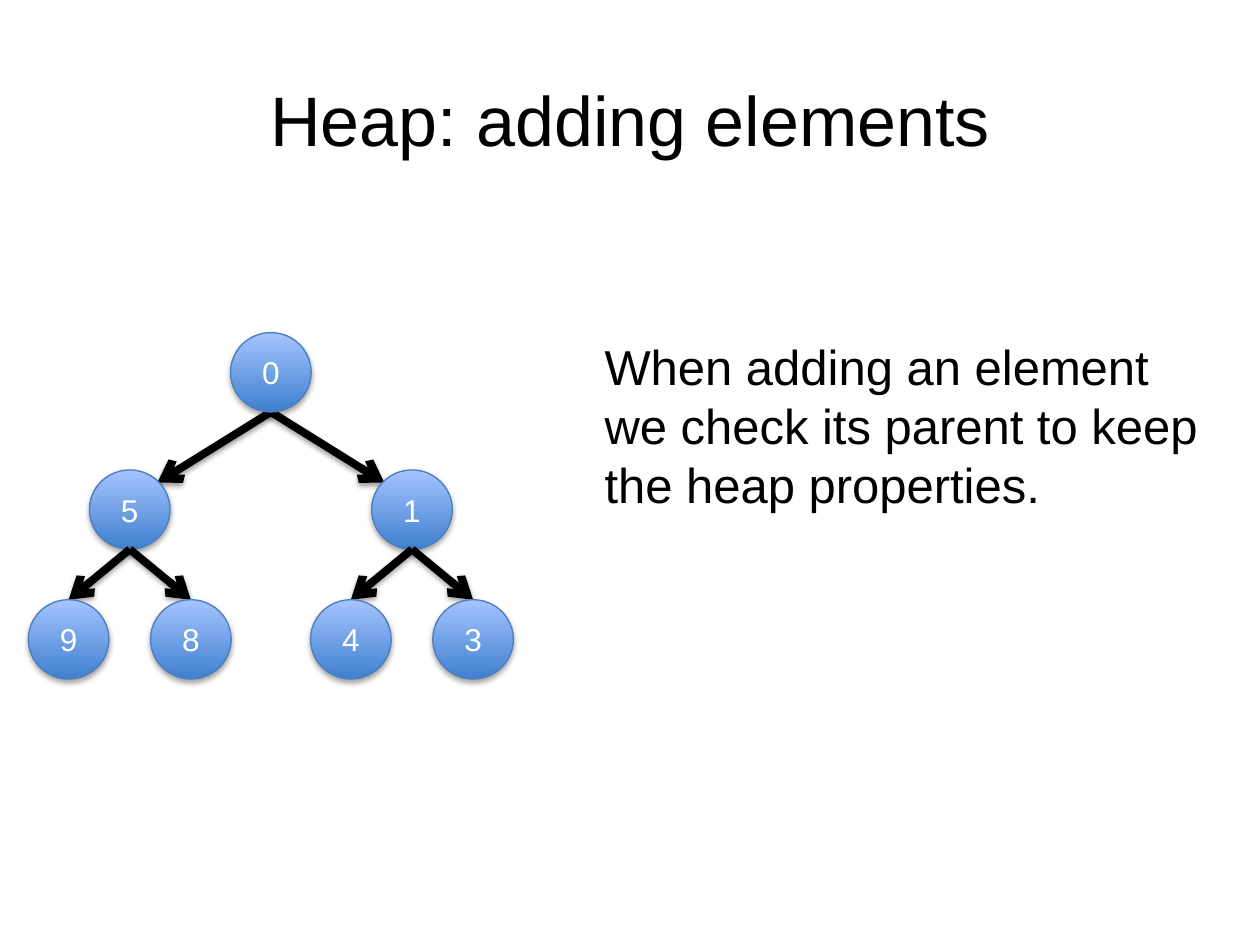
from lxml import etree
from pptx import Presentation, util as u
from pptx.dml.color import RGBColor
from pptx.enum import shapes, text
from pptx.oxml import ns

BLACK = RGBColor(0x00, 0x00, 0x00)
WHITE = RGBColor(0xFF, 0xFF, 0xFF)
DEEP = RGBColor(0x3F, 0x80, 0xCE)
PALE = RGBColor(0xA4, 0xC4, 0xFF)
EDGE = RGBColor(0x4B, 0x7E, 0xBC)

WIDE, HIGH = 10, 7.5
NODE_W, NODE_H = 0.64, 0.63
ROWS = (2.64, 3.73, 4.76)  # top of each tree level
ROOT_X = 2.15              # centre of the tree
STEP, LEAF = 1.12, 0.485   # reach to each side, per level


def write(shape, lines, size=18, color=BLACK, align=text.PP_ALIGN.LEFT,
          anchor=text.MSO_ANCHOR.TOP):
    frame = shape.text_frame
    frame.word_wrap = True
    frame.vertical_anchor = anchor
    frame.text = "\n".join(lines)
    for para in frame.paragraphs:
        para.alignment = align
        font = para.runs[0].font
        font.name, font.size = "Arial", u.Pt(size)
        font.color.rgb = color


def box(slide, x, y, w, h, lines, **form):
    # Place and size are shares of the slide
    shape = slide.shapes.add_textbox(
        u.Inches(x * WIDE), u.Inches(y * HIGH),
        u.Inches(w * WIDE), u.Inches(h * HIGH))
    write(shape, lines, **form)


def shade(shape, drop, alpha):
    # Soft shadow straight below; call once the line is set
    props = shape._element.spPr
    effects = etree.SubElement(props, ns.qn("a:effectLst"))
    outer = etree.SubElement(
        effects, ns.qn("a:outerShdw"), blurRad=str(u.Pt(3.15)),
        dist=str(u.Pt(drop)), dir="5400000", rotWithShape="0")
    color = etree.SubElement(outer, ns.qn("a:srgbClr"), val=str(BLACK))
    etree.SubElement(color, ns.qn("a:alpha"), val=str(alpha * 1000))


def node(tree, x, row, label):
    shape = tree.shapes.add_shape(
        shapes.MSO_SHAPE.OVAL, u.Inches(x - NODE_W / 2),
        u.Inches(ROWS[row]), u.Inches(NODE_W), u.Inches(NODE_H))
    shape.fill.gradient()
    shape.fill.gradient_angle = 90
    for stop, color in zip(shape.fill.gradient_stops, (DEEP, PALE)):
        stop.color.rgb = color
    shape.line.color.rgb = EDGE
    shape.line.width = u.Pt(0.75)
    shade(shape, 1.8, 35)
    write(shape, [label], color=WHITE, align=text.PP_ALIGN.CENTER,
          anchor=text.MSO_ANCHOR.MIDDLE)


def arrow(tree, x, row, end_x, end_y):
    # From the foot of a node to a point on its child
    line = tree.shapes.add_connector(
        shapes.MSO_CONNECTOR.STRAIGHT, u.Inches(x),
        u.Inches(ROWS[row] + NODE_H), u.Inches(end_x), u.Inches(end_y))
    line.line.color.rgb = BLACK
    line.line.width = u.Pt(4.5)
    etree.SubElement(line.line._get_or_add_ln(), ns.qn("a:tailEnd"),
                     type="arrow")
    shade(line, 1.6, 38)


def heap(slide):
    tree = slide.shapes.add_group_shape()
    # Upper arrows meet the children at their inner shoulder
    for side in (-1, 1):
        arrow(tree, ROOT_X, 0, ROOT_X + side * (STEP - 0.22),
              ROWS[1] + 0.1)
    # Root and its two children
    for side, row, label in ((-1, 1, "5"), (0, 0, "0"), (1, 1, "1")):
        node(tree, ROOT_X + side * STEP, row, label)
    # Leaves under each child
    for side, labels in ((1, "43"), (-1, "98")):
        mid = ROOT_X + side * STEP
        spots = (mid - LEAF, mid + LEAF)
        for x in spots:
            arrow(tree, mid, 1, x, ROWS[2])
        for x, label in zip(spots, labels):
            node(tree, x, 2, label)


def main():
    deck = Presentation()
    deck.slide_width, deck.slide_height = u.Inches(WIDE), u.Inches(HIGH)
    slide = deck.slides.add_slide(deck.slide_layouts[6])
    # Title
    box(slide, 0.05, 0.04, 0.9, 0.17, ["Heap: adding elements"], size=40,
        align=text.PP_ALIGN.CENTER, anchor=text.MSO_ANCHOR.MIDDLE)
    # Tree on the left, remark on the right
    heap(slide)
    box(slide, 0.47, 0.35, 0.53, 0.2,
        ["When adding an element",
         "we check its parent to keep the heap properties."], size=28)
    deck.save("out.pptx")


if __name__ == "__main__":
    main()
